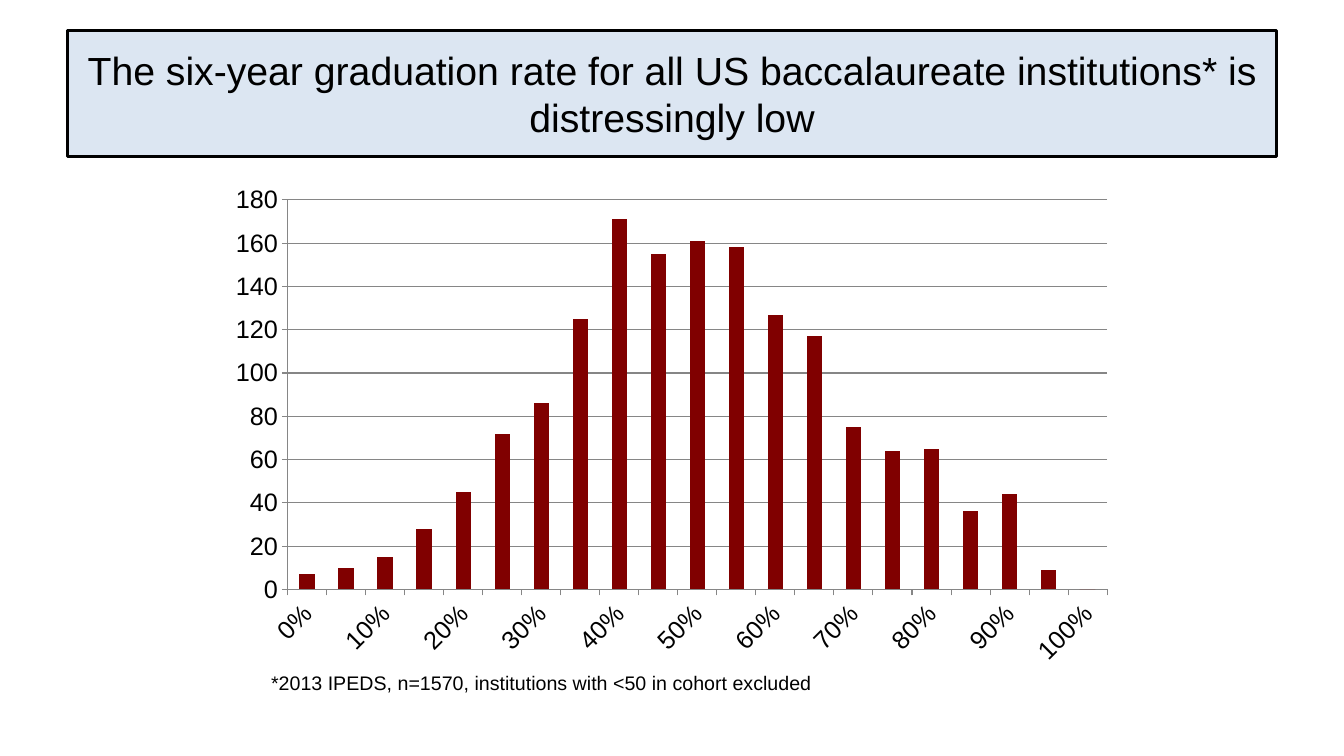
import pptx
import pptx.chart.data
import pptx.dml.color
import pptx.enum.chart
import pptx.enum.text
import pptx.oxml
import pptx.oxml.ns
import pptx.util

WIDTH = pptx.util.Inches(13.33)
HEIGHT = pptx.util.Inches(7.5)
BLACK = "000000"


def color(hex_string):
    return pptx.dml.color.RGBColor.from_string(hex_string)


def write(shape, text, size, align, anchor, wrap):
    frame = shape.text_frame
    frame.auto_size = pptx.enum.text.MSO_AUTO_SIZE.NONE
    frame.word_wrap = wrap
    frame.vertical_anchor = anchor
    paragraph = frame.paragraphs[0]
    paragraph.alignment = align
    run = paragraph.add_run()
    run.text = text
    run.font.name = "Arial"
    run.font.size = pptx.util.Pt(size)
    run.font.color.rgb = color(BLACK)


presentation = pptx.Presentation()
presentation.slide_width = WIDTH
presentation.slide_height = HEIGHT
slide = presentation.slides.add_slide(presentation.slide_layouts[5])

title = slide.shapes.title
title.left, title.top = int(WIDTH * 0.05), int(HEIGHT * 0.04)
title.width, title.height = int(WIDTH * 0.9), pptx.util.Inches(1.25)
title.fill.solid()
title.fill.fore_color.rgb = color("DCE6F2")
title.line.color.rgb = color(BLACK)
title.line.width = pptx.util.Pt(2.25)
write(
    title,
    "The six-year graduation rate for all US baccalaureate institutions* is distressingly low",
    size=28,
    align=pptx.enum.text.PP_ALIGN.CENTER,
    anchor=pptx.enum.text.MSO_ANCHOR.MIDDLE,
    wrap=True,
)

counts = [7, 10, 15, 28, 45, 72, 86, 125, 171, 155, 161, 158, 127, 117, 75, 64, 65, 36, 44, 9, 0]
chart_data = pptx.chart.data.CategoryChartData()
chart_data.categories = [step / 20 for step in range(len(counts))]
chart_data.categories.number_format = "0%"
chart_data.add_series("Series 1", counts)
chart = slide.shapes.add_chart(
    pptx.enum.chart.XL_CHART_TYPE.COLUMN_CLUSTERED,
    pptx.util.Inches(2.17),
    pptx.util.Inches(1.75),
    pptx.util.Inches(9),
    pptx.util.Inches(4.95),
    chart_data,
).chart
chart.has_legend = False
chart.has_title = False
chart.font.name = "Arial"
chart.font.size = pptx.util.Pt(10)
chart.font.color.rgb = color(BLACK)

plot = chart.plots[0]
plot.gap_width = 150
plot.vary_by_categories = False
series = plot.series[0]
series.format.fill.solid()
series.format.fill.fore_color.rgb = color("800000")

rate_axis = chart.category_axis
count_axis = chart.value_axis
count_axis.minimum_scale = 0
count_axis.maximum_scale = 180
count_axis.major_unit = 20
count_axis.has_major_gridlines = True
rate_axis.has_major_gridlines = False
for axis, number_format in ((rate_axis, "0%"), (count_axis, "General")):
    axis.major_tick_mark = pptx.enum.chart.XL_TICK_MARK.OUTSIDE
    axis.minor_tick_mark = pptx.enum.chart.XL_TICK_MARK.NONE
    axis.tick_labels.number_format = number_format
    axis.tick_labels.number_format_is_linked = False
    axis.tick_labels.font.name = "Arial"
    axis.tick_labels.font.size = pptx.util.Pt(18)
    axis.tick_labels.font.color.rgb = color(BLACK)
for line in (rate_axis.format.line, count_axis.format.line, count_axis.major_gridlines.format.line):
    line.color.rgb = color("868686")
    line.width = pptx.util.Pt(0.75)

qualified = pptx.oxml.ns.qn
rate_axis_xml = chart.element.find(".//" + qualified("c:catAx"))
rate_axis_xml.find(qualified("c:txPr")).find(qualified("a:bodyPr")).set("rot", str(-45 * 60000))
label_skip = pptx.oxml.parse_xml(f'<c:tickLblSkip {pptx.oxml.ns.nsdecls("c")} val="2"/>')
rate_axis_xml.find(qualified("c:noMultiLvlLbl")).addprevious(label_skip)

plot_area = chart.element.find(".//" + qualified("c:plotArea"))
for layout in plot_area.findall(qualified("c:layout")):
    plot_area.remove(layout)
shares = "".join(
    f'<c:{name} val="{share}"/>' for name, share in (("x", 0.076), ("y", 0.047), ("w", 0.903), ("h", 0.781))
)
plot_area.insert(0, pptx.oxml.parse_xml(
    f'<c:layout {pptx.oxml.ns.nsdecls("c")}><c:manualLayout><c:layoutTarget val="inner"/>'
    f'<c:xMode val="edge"/><c:yMode val="edge"/>{shares}</c:manualLayout></c:layout>'
))

footnote = slide.shapes.add_textbox(
    pptx.util.Inches(2.59), pptx.util.Inches(6.61), pptx.util.Inches(5.6), pptx.util.Inches(0.34)
)
write(
    footnote,
    "*2013 IPEDS, n=1570, institutions with <50 in cohort excluded",
    size=14,
    align=pptx.enum.text.PP_ALIGN.LEFT,
    anchor=pptx.enum.text.MSO_ANCHOR.TOP,
    wrap=False,
)

presentation.save("out.pptx")
